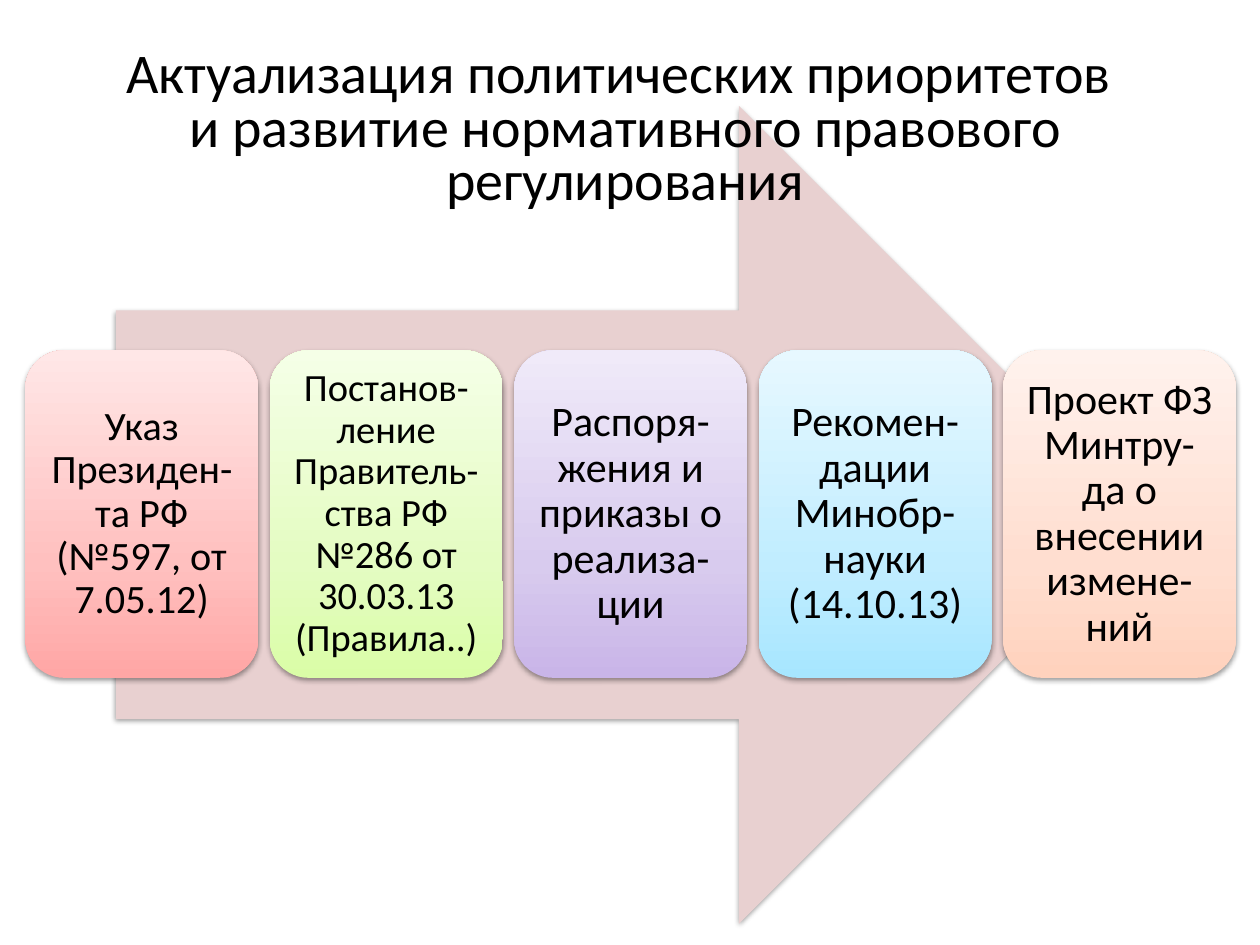
from copy import deepcopy

from pptx import Presentation
from pptx.dml.color import RGBColor as RGB
from pptx.enum.shapes import MSO_SHAPE as Shape
from pptx.enum.text import MSO_ANCHOR as Anchor, PP_ALIGN as Align
from pptx.oxml import parse_xml
from pptx.oxml.ns import nsdecls, qn
from pptx.util import Inches, Pt

COLORS = {
    "ink": "000000",
    "arrow": "E8D0D0",
    "red": ("FFA6A5", "FFC0BF", "FFE7E7"),
    "green": ("DAFDA7", "E4FCC2", "F5FFE7"),
    "violet": ("C9B5E8", "D8CBEE", "F0EAF9"),
    "blue": ("A7E6FF", "C1EDFF", "E7F8FF"),
    "orange": ("FFD2BD", "FFDED0", "FFF2ED"),
}
STOPS = (0, 0.35, 1)
STEPS = [
    ("red", 23, "Указ Президен-та РФ (№597, от 7.05.12)"),
    ("green", 22, "Постанов-ление Правитель-ства РФ №286 от 30.03.13 (Правила..)"),
    ("violet", 24, "Распоря-жения и приказы о реализа-ции"),
    ("blue", 24, "Рекомен-дации Минобр-науки (14.10.13)"),
    ("orange", 24, "Проект ФЗ Минтру-да о внесении измене-ний"),
]
TITLE = [
    "Актуализация политических приоритетов ",
    "и развитие нормативного правового регулирования",
]


class Deck:
    font = "Calibri"

    def __init__(self, slide):
        self.slide = slide

    def shape(self, kind, box):
        item = self.slide.shapes.add_shape(kind, *map(Inches, box))
        item.line.fill.background()
        item.shadow.inherit = False
        glow = parse_xml(
            f'<a:outerShdw {nsdecls("a")} blurRad="{Pt(3.1)}" dist="{Pt(1.6)}" '
            'dir="5400000" rotWithShape="0"><a:srgbClr val="000000">'
            '<a:alpha val="38000"/></a:srgbClr></a:outerShdw>'
        )
        item._element.spPr.find(qn("a:effectLst")).append(glow)
        return item

    def arrow(self, box):
        item = self.shape(Shape.RIGHT_ARROW, box)
        item.fill.solid()
        item.fill.fore_color.rgb = RGB.from_string(COLORS["arrow"])

    def card(self, box, tone, size, text):
        item = self.shape(Shape.ROUNDED_RECTANGLE, box)
        fill = item.fill
        fill.gradient()
        fill.gradient_angle = 90
        first = item._element.spPr.find(".//" + qn("a:gs"))
        first.addnext(deepcopy(first))
        for stop, place, color in zip(fill.gradient_stops, STOPS, COLORS[tone]):
            stop.position = place
            stop.color.rgb = RGB.from_string(color)
        self.text(item.text_frame, [text], size, 0.9, 0.1, 0.1)

    def title(self, box, lines):
        item = self.slide.shapes.add_textbox(*map(Inches, box))
        self.text(item.text_frame, lines, 32, 0.8, 0.1, 0.05)

    def text(self, frame, lines, size, space, side, edge):
        frame.word_wrap = True
        frame.vertical_anchor = Anchor.MIDDLE
        frame.margin_left = frame.margin_right = Inches(side)
        frame.margin_top = frame.margin_bottom = Inches(edge)
        para = frame.paragraphs[0]
        para.alignment = Align.CENTER
        para.line_spacing = space
        for i, line in enumerate(lines):
            if i:
                para.add_line_break()
            run = para.add_run()
            run.text = line
            run.font.name = self.font
            run.font.size = Pt(size)
            run.font.color.rgb = RGB.from_string(COLORS["ink"])


def main():
    prs = Presentation()
    prs.slide_width, prs.slide_height = Inches(10), Inches(7.5)
    deck = Deck(prs.slides.add_slide(prs.slide_layouts[6]))
    deck.arrow((0.92, 0.84, 8.19, 6.49))
    left, pitch = 0.2, 1.94
    for i, step in enumerate(STEPS):
        deck.card((left + i * pitch, 2.78, 1.85, 2.6), *step)
    deck.title((0.28, 0.3, 9.37, 1.48), TITLE)
    prs.save("out.pptx")


if __name__ == "__main__":
    main()
